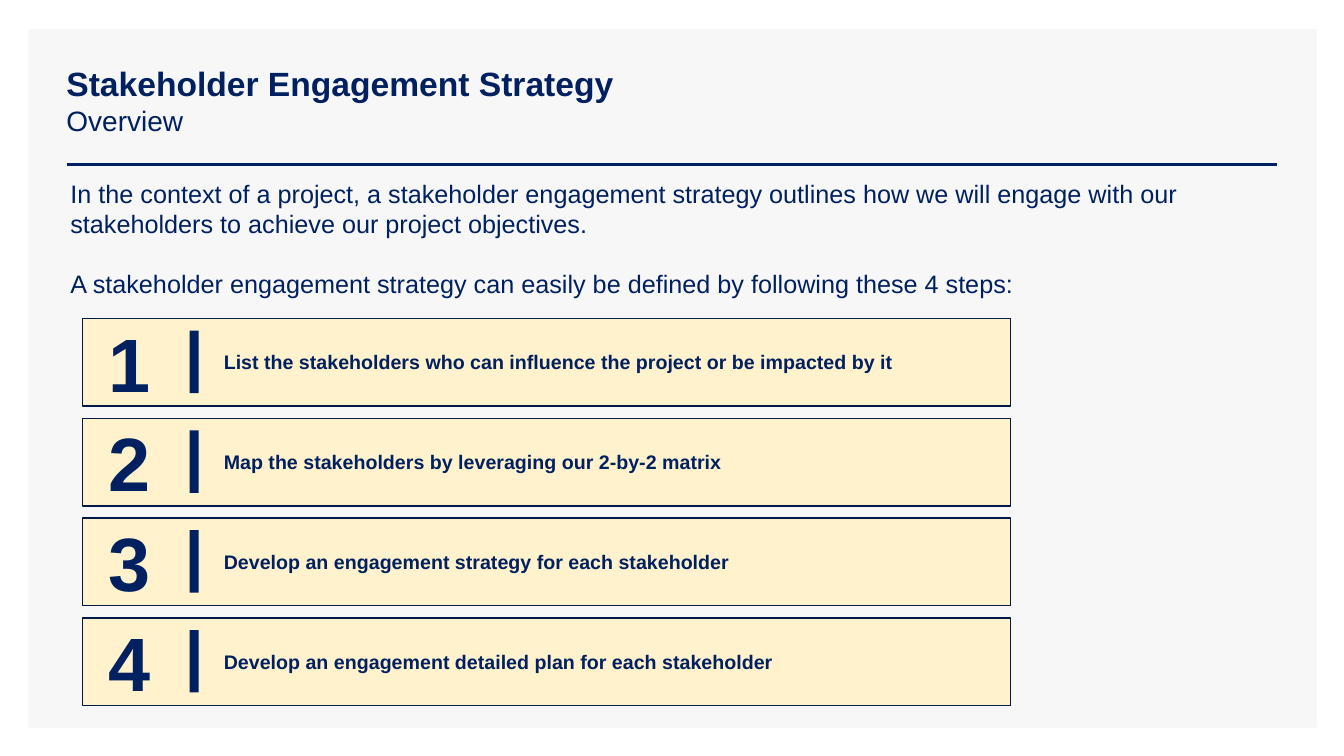
from dataclasses import dataclass

from lxml.etree import SubElement
from pptx import Presentation
from pptx.dml.color import RGBColor
from pptx.enum.shapes import MSO_CONNECTOR as Connector, MSO_SHAPE as Shape
from pptx.enum.text import MSO_ANCHOR as Anchor, PP_ALIGN as Align
from pptx.oxml.ns import qn
from pptx.util import Emu, Pt

PX = 9144  # EMU per px, 100 px to the inch


@dataclass(frozen=True)
class Theme:
    font: str = "Arial"
    navy: str = "002060"
    outline: str = "001847"
    cream: str = "FFF2CC"
    panel: str = "F7F7F7"
    title: int = 24
    subtitle: int = 20
    body: int = 18
    step: int = 14
    number: int = 54


def px(*lengths):
    return [Emu(length * PX) for length in lengths]


def color(value):
    return RGBColor.from_string(value)


class SlideBuilder:
    def __init__(self, slide, theme):
        self.shapes = slide.shapes
        self.theme = theme

    def rectangle(self, *box, fill, line=None):
        shape = self.shapes.add_shape(Shape.RECTANGLE, *px(*box))
        shape.shadow.inherit = False
        shape.fill.solid()
        shape.fill.fore_color.rgb = color(fill)
        if line:
            shape.line.color.rgb = color(line)
            shape.line.width = Pt(1)
        else:
            shape.line.fill.background()

    def rule(self, *ends):
        line = self.shapes.add_connector(Connector.STRAIGHT, *px(*ends))
        line.line.color.rgb = color(self.theme.navy)
        line.line.width = Pt(2)
        SubElement(line._element.spPr, qn("a:effectLst"))

    def text_box(self, *box, anchor=Anchor.MIDDLE, inset=True):
        frame = self.shapes.add_textbox(*px(*box)).text_frame
        frame.word_wrap = True
        frame.vertical_anchor = anchor
        if not inset:
            frame.margin_left = frame.margin_right = 0
            frame.margin_top = frame.margin_bottom = 0
        return frame

    def add_text(self, frame, text, size, bold=False, align=Align.LEFT, before=0):
        """Fill the first paragraph of the frame, or add one after it."""
        paragraph = frame.paragraphs[0]
        if paragraph.runs:
            paragraph = frame.add_paragraph()
            paragraph.space_before = Pt(before)
        paragraph.alignment = align
        run = paragraph.add_run()
        run.text = text
        run.font.name = self.theme.font
        run.font.size = Pt(size)
        run.font.bold = bold
        run.font.color.rgb = color(self.theme.navy)

    def step(self, top, number, text):
        theme = self.theme
        self.rectangle(82, top, 920, 87, fill=theme.cream, line=theme.outline)
        number_frame = self.text_box(90, top, 77, 86, inset=False)
        self.add_text(number_frame, str(number), theme.number, bold=True, align=Align.CENTER)
        label_frame = self.text_box(222, top + 31, 670, 24, inset=False)
        self.add_text(label_frame, text, theme.step, bold=True)
        self.rectangle(188, top + 12, 9, 62, fill=theme.navy)


STEPS = [
    "List the stakeholders who can influence the project or be impacted by it",
    "Map the stakeholders by leveraging our 2-by-2 matrix",
    "Develop an engagement strategy for each stakeholder",
    "Develop an engagement detailed plan for each stakeholder",
]
FIRST_STEP_TOP, STEP_PITCH = 316, 99


def main():
    presentation = Presentation()
    presentation.slide_width, presentation.slide_height = px(1333, 750)
    slide = presentation.slides.add_slide(presentation.slide_layouts[6])
    theme = Theme()
    builder = SlideBuilder(slide, theme)

    builder.rectangle(28, 29, 1278, 693, fill=theme.panel)
    builder.rule(66, 163, 1267, 163)

    title = builder.text_box(56, 40, 1211, 119)
    builder.add_text(title, "Stakeholder Engagement Strategy", theme.title, bold=True)
    builder.add_text(title, "Overview", theme.subtitle)

    intro = builder.text_box(60, 172, 1201, 131, anchor=Anchor.TOP)
    builder.add_text(
        intro,
        "In the context of a project, a stakeholder engagement strategy outlines "
        "how we will engage with our stakeholders to achieve our project objectives.",
        theme.body,
    )
    builder.add_text(
        intro,
        "A stakeholder engagement strategy can easily be defined by following these 4 steps:",
        theme.body,
        before=21,
    )

    for index, text in enumerate(STEPS):
        builder.step(FIRST_STEP_TOP + index * STEP_PITCH, index + 1, text)

    presentation.save("out.pptx")


if __name__ == "__main__":
    main()
